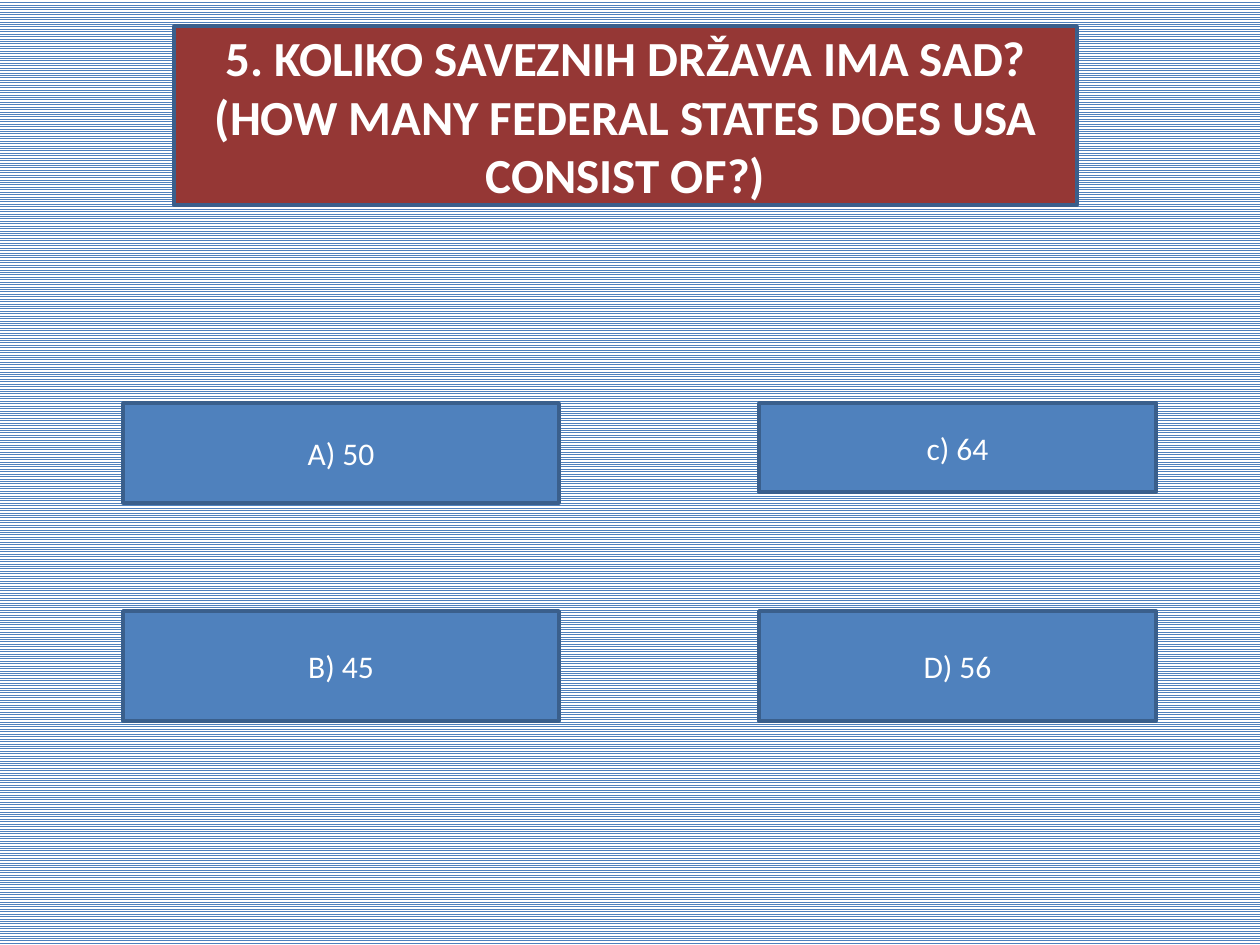
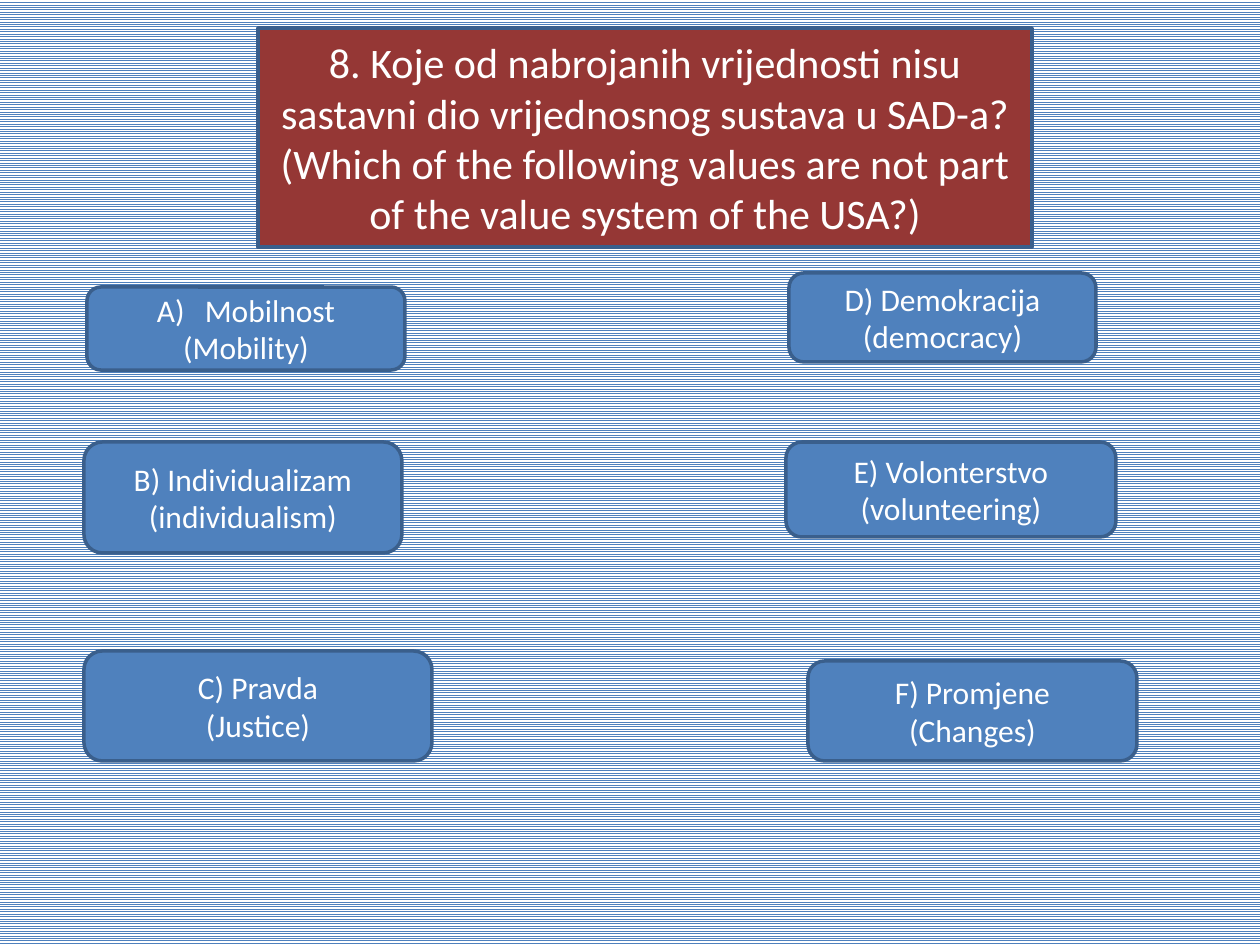
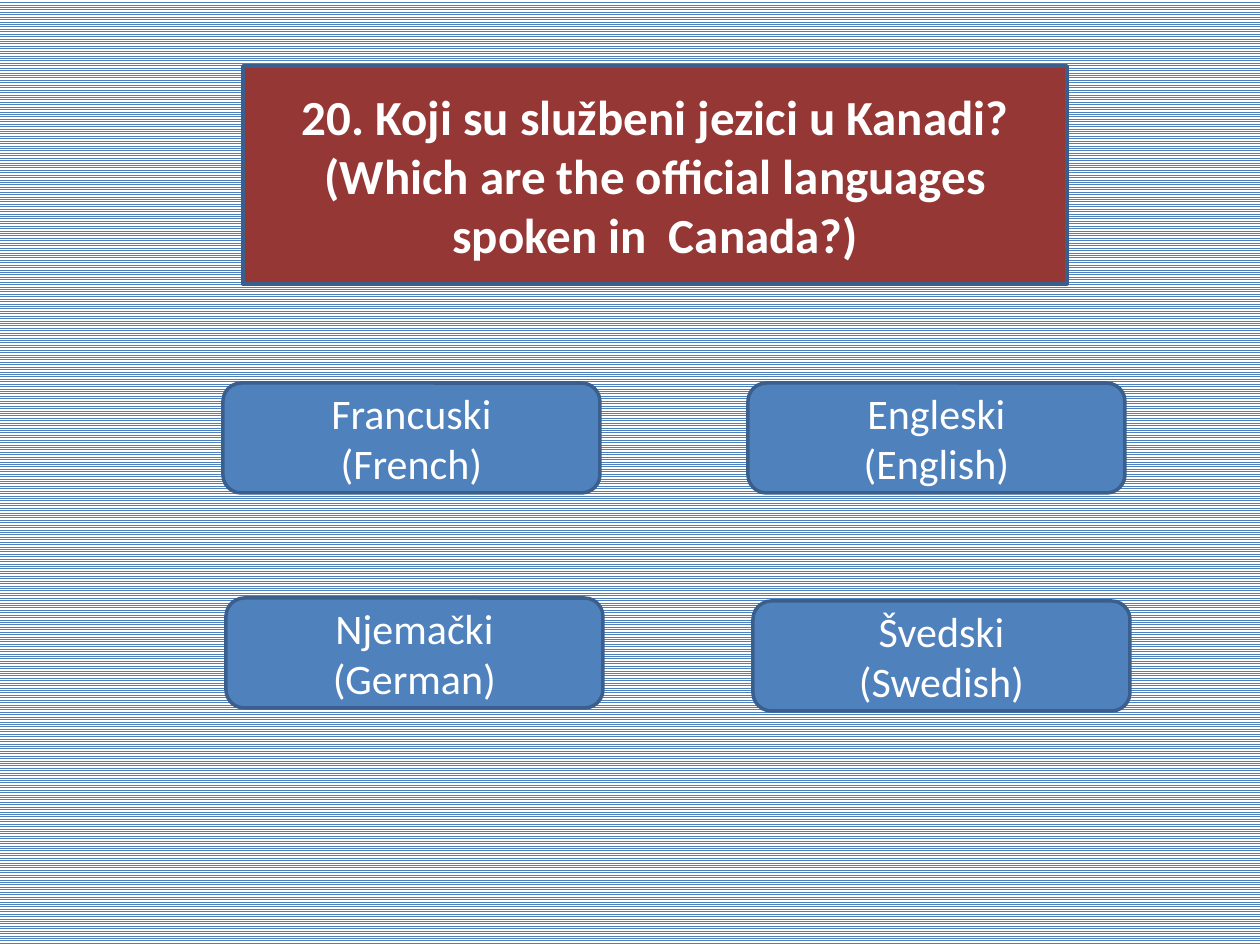
from pptx import Presentation
from pptx.dml.color import RGBColor
from pptx.enum.dml import MSO_PATTERN
from pptx.enum.shapes import MSO_SHAPE as Preset
from pptx.enum.text import MSO_ANCHOR as Anchor, MSO_AUTO_SIZE as AutoSize, PP_ALIGN as Align
from pptx.oxml.xmlchemy import OxmlElement
from pptx.util import Pt

EMU_PER_PX = 914400 / 126
BLUE = RGBColor(0x4F, 0x81, 0xBD)
DARK_BLUE = RGBColor(0x3A, 0x5F, 0x8C)
RED = RGBColor(0x95, 0x37, 0x35)
WHITE = RGBColor(0xFF, 0xFF, 0xFF)
FONT = "Calibri"
TITLE_ONLY = 5
LETTER_INDENT = 48
ANSWER_SIZE = 18


def px(length):
    return round(length * EMU_PER_PX)


def write_text(shape, lines, size=ANSWER_SIZE, bold=False, color=WHITE):
    frame = shape.text_frame
    frame.auto_size = AutoSize.NONE
    frame.word_wrap = True
    frame.vertical_anchor = Anchor.MIDDLE
    frame.text = "\n".join(lines)
    for paragraph in frame.paragraphs:
        paragraph.alignment = Align.CENTER
        font = paragraph.font
        for run in paragraph.runs:
            font = run.font
            font.name = FONT
            font.size = Pt(size)
            font.bold = bold
            font.color.rgb = color


def paint(shape, fill):
    shape.fill.solid()
    shape.fill.fore_color.rgb = fill
    shape.line.color.rgb = DARK_BLUE
    shape.line.width = Pt(2)


def letter_paragraph(paragraph):
    properties = paragraph._p.get_or_add_pPr()
    properties.set("marL", str(px(LETTER_INDENT)))
    properties.set("indent", str(-px(LETTER_INDENT)))
    numbering = OxmlElement("a:buAutoNum")
    numbering.set("type", "alphaUcParenR")
    properties.append(numbering)


def add_question(presentation, lines, box, size=28, bold=True):
    slide = presentation.slides.add_slide(presentation.slide_layouts[TITLE_ONLY])
    title = slide.shapes.title
    title.left, title.top, title.width, title.height = map(px, box)
    paint(title, RED)
    write_text(title, lines, size=size, bold=bold)
    return slide


def add_answer(slide, lines, box, preset=Preset.ROUNDED_RECTANGLE, size=ANSWER_SIZE):
    answer = slide.shapes.add_shape(preset, *map(px, box))
    answer.shadow.inherit = False
    paint(answer, BLUE)
    write_text(answer, lines, size=size)
    return answer


def add_states_slide(presentation):
    slide = add_question(
        presentation,
        ["5. KOLIKO SAVEZNIH DRŽAVA IMA SAD?", "(HOW MANY FEDERAL STATES DOES USA CONSIST OF?)"],
        (174, 26, 903, 179),
    )
    answers = [
        ("A) 50", (123, 403, 436, 100)),
        ("B) 45", (123, 611, 436, 110)),
        ("c) 64", (759, 403, 397, 89)),
        ("D) 56", (759, 611, 397, 110)),
    ]
    for text, box in answers:
        add_answer(slide, [text], box, preset=Preset.RECTANGLE)


def add_values_slide(presentation):
    slide = add_question(
        presentation,
        [
            "8. Koje od nabrojanih vrijednosti nisu sastavni dio vrijednosnog sustava u SAD-a?",
            "(Which of the following values are not part of the value system of the USA?)",
        ],
        (258, 28, 774, 219),
        size=24,
        bold=False,
    )
    mobility = add_answer(slide, ["Mobilnost", "(Mobility)"], (87, 287, 318, 83))
    letter_paragraph(mobility.text_frame.paragraphs[0])
    answers = [
        ("B) Individualizam", "(individualism)", (84, 442, 318, 111)),
        ("C) Pravda", "(Justice)", (84, 651, 348, 110)),
        ("D) Demokracija", "(democracy)", (789, 273, 307, 89)),
        ("E) Volonterstvo", "(volunteering)", (786, 442, 330, 95)),
        ("F) Promjene", "(Changes)", (808, 661, 329, 100)),
    ]
    for croatian, english, box in answers:
        add_answer(slide, [croatian, english], box)


def add_languages_slide(presentation):
    slide = add_question(
        presentation,
        ["20. Koji su službeni jezici u Kanadi?", "(Which are the official languages spoken in  Canada?)"],
        (243, 66, 824, 218),
    )
    answers = [
        ("Francuski", "(French)", 223, 383),
        ("Njemački", "(German)", 226, 598),
        ("Švedski", "(Swedish)", 753, 601),
        ("Engleski", "(English)", 748, 383),
    ]
    for croatian, english, left, top in answers:
        add_answer(slide, [croatian, english], (left, top, 377, 110), size=24)


def set_background(presentation):
    fill = presentation.slide_master.background.fill
    fill.patterned()
    fill.pattern = MSO_PATTERN.NARROW_HORIZONTAL
    fill.fore_color.rgb = BLUE
    fill.back_color.rgb = WHITE


def main():
    presentation = Presentation()
    presentation.slide_width = px(1260)
    presentation.slide_height = px(945)
    set_background(presentation)
    add_states_slide(presentation)
    add_values_slide(presentation)
    add_languages_slide(presentation)
    presentation.save("out.pptx")


if __name__ == "__main__":
    main()
